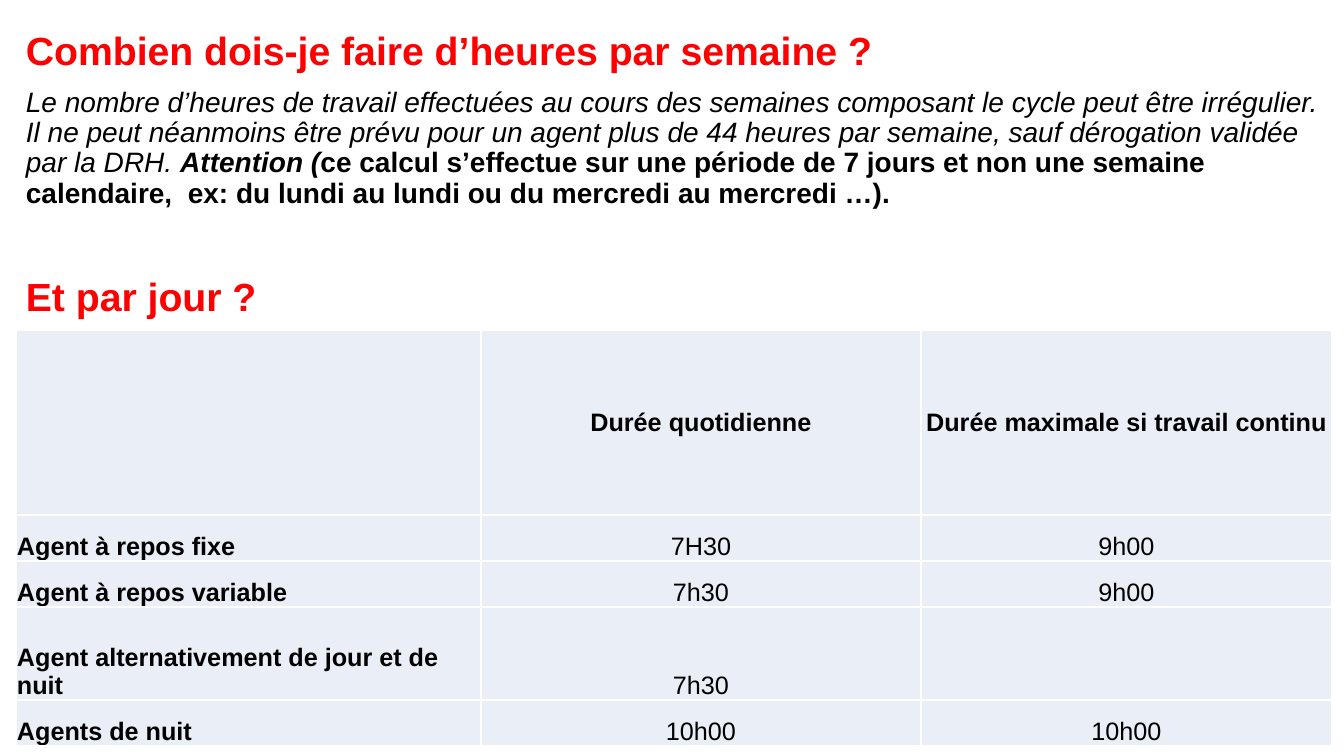
from lxml import etree
from pptx import Presentation
from pptx.dml.color import RGBColor
from pptx.enum.text import MSO_ANCHOR, PP_ALIGN
from pptx.oxml.ns import qn
from pptx.util import Pt

PX = 914400 / 100.8
LEFT, CENTER = PP_ALIGN.LEFT, PP_ALIGN.CENTER
MIDDLE, BOTTOM = MSO_ANCHOR.MIDDLE, MSO_ANCHOR.BOTTOM
COLORS = {"heading": "FF0000", "text": "000000", "cell": "EAEFF7", "border": "FFFFFF"}


def px(length):
    return round(length * PX)


def add_text(paragraph, text, size=20, color="text", bold=False, italic=False):
    run = paragraph.add_run()
    run.text = text
    font = run.font
    font.name = "Arial"
    font.size = Pt(size)
    font.bold = bold
    font.italic = italic
    font.color.rgb = RGBColor.from_string(COLORS[color])


presentation = Presentation()
presentation.slide_width = px(1344)
presentation.slide_height = px(756)
slide = presentation.slides.add_slide(presentation.slide_layouts[6])

# Headings and rule on weekly hours
heading = {"size": 28, "color": "heading", "bold": True}
paragraphs = [
    (0, [("Combien dois-je faire d’heures par semaine ?", heading)]),
    (10, [
        ("Le nombre d’heures de travail effectuées au cours des semaines composant "
         "le cycle peut être irrégulier. Il ne peut néanmoins être prévu pour un agent "
         "plus de 44 heures par semaine, sauf dérogation validée par la DRH. ",
         {"italic": True}),
        ("Attention (", {"bold": True, "italic": True}),
        ("ce calcul s’effectue sur une période de 7 jours et non une semaine "
         "calendaire,  ex: du lundi au lundi ou du mercredi au mercredi …).",
         {"bold": True}),
    ]),
    (49, [("Et par jour ?", heading)]),
]
text_box = slide.shapes.add_textbox(px(16), px(27), px(1316), px(719))
text_frame = text_box.text_frame
text_frame.word_wrap = True
for index, (space_before, runs) in enumerate(paragraphs):
    paragraph = text_frame.add_paragraph() if index else text_frame.paragraphs[0]
    paragraph.line_spacing = 0.9
    paragraph.space_before = Pt(space_before)
    for text, text_format in runs:
        add_text(paragraph, text, **text_format)

# Daily hours by type of agent
column_widths = [465, 440, 411]
row_heights = [185, 46, 46, 93, 46]
rows = [
    ["", "Durée quotidienne", "Durée maximale si travail continu"],
    ["Agent à repos fixe", "7H30", "9h00"],
    ["Agent à repos variable", "7h30", "9h00"],
    ["Agent alternativement de jour et de nuit", "7h30", ""],
    ["Agents de nuit", "10h00", "10h00"],
]
table = slide.shapes.add_table(
    len(rows), len(column_widths), px(16), px(330),
    px(sum(column_widths)), px(sum(row_heights))).table
table.first_row = False
table.horz_banding = False
for column, width in zip(table.columns, column_widths):
    column.width = px(width)
for row, height in zip(table.rows, row_heights):
    row.height = px(height)

for row_index, row in enumerate(rows):
    for column_index, text in enumerate(row):
        cell = table.cell(row_index, column_index)
        cell.margin_left = cell.margin_right = cell.margin_top = px(1)
        cell.margin_bottom = 0
        cell.vertical_anchor = BOTTOM if row_index else MIDDLE
        properties = cell._tc.get_or_add_tcPr()
        for side in ("a:lnL", "a:lnR", "a:lnT", "a:lnB"):
            border = etree.SubElement(properties, qn(side), w=str(Pt(1)))
            border_fill = etree.SubElement(border, qn("a:solidFill"))
            etree.SubElement(border_fill, qn("a:srgbClr"), val=COLORS["border"])
        cell.fill.solid()
        cell.fill.fore_color.rgb = RGBColor.from_string(COLORS["cell"])
        if text:
            paragraph = cell.text_frame.paragraphs[0]
            paragraph.alignment = CENTER if column_index else LEFT
            add_text(paragraph, text, size=18, bold=row_index == 0 or column_index == 0)

presentation.save("out.pptx")
